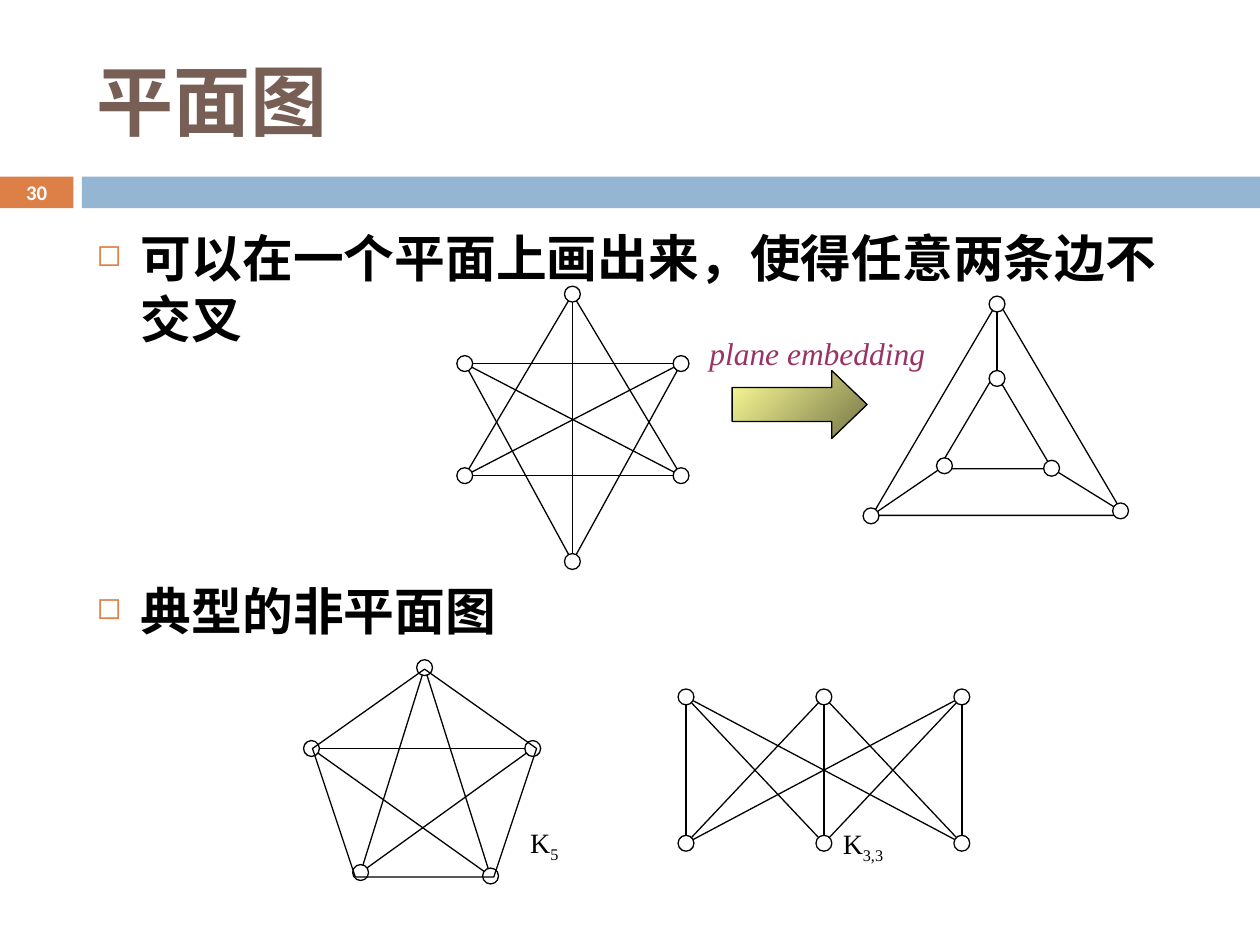
import itertools
import math

import pptx
import pptx.dml.color
import pptx.enum.shapes
import pptx.enum.text
import pptx.oxml.ns
import pptx.util
from lxml import etree

Cm = pptx.util.Cm
Pt = pptx.util.Pt
SHAPE = pptx.enum.shapes.MSO_SHAPE
ALIGN = pptx.enum.text.PP_ALIGN
ANCHOR = pptx.enum.text.MSO_ANCHOR
COLORS = {name: pptx.dml.color.RGBColor.from_string(value) for name, value in {
    "orange": "DD8047", "blue": "94B6D2", "brown": "775F55", "plum": "993366",
    "black": "000000", "white": "FFFFFF", "yellow": "FFFF99", "olive": "767647",
}.items()}

presentation = pptx.Presentation()
presentation.slide_width, presentation.slide_height = Cm(25.4), Cm(19.05)
slide = presentation.slides.add_slide(presentation.slide_layouts[6])


def add_shape(kind, left, top, width, height, fill=None, line="black"):
    shape = slide.shapes.add_shape(kind, Cm(left), Cm(top), Cm(width), Cm(height))
    shape.shadow.inherit = False
    if fill:
        shape.fill.solid()
        shape.fill.fore_color.rgb = COLORS[fill]
    else:
        shape.fill.background()
    if line:
        shape.line.color.rgb = COLORS[line]
        shape.line.width = Pt(0.75)
    else:
        shape.line.fill.background()
    return shape


def add_text(left, top, width, height, text, size, color, font="Calibri"):
    box = slide.shapes.add_textbox(Cm(left), Cm(top), Cm(width), Cm(height))
    box.text_frame.word_wrap = True
    paragraph = box.text_frame.paragraphs[0]
    paragraph.text = text
    paragraph.font.name = font
    paragraph.font.size = Pt(size)
    paragraph.font.color.rgb = COLORS[color]
    return box


# Header bars and slide number
number_bar = add_shape(SHAPE.RECTANGLE, 0, 3.56, 1.48, 0.64, "orange", None)
add_shape(SHAPE.RECTANGLE, 1.65, 3.56, 23.75, 0.64, "blue", None)
frame = number_bar.text_frame
frame.margin_left = frame.margin_right = frame.margin_top = frame.margin_bottom = 0
frame.vertical_anchor = ANCHOR.MIDDLE
paragraph = frame.paragraphs[0]
paragraph.text = "30"
paragraph.alignment = ALIGN.CENTER
paragraph.font.name = "Calibri"
paragraph.font.size = Pt(11.9)
paragraph.font.bold = True
paragraph.font.color.rgb = COLORS["white"]

# Title
title = add_text(1.7, 0.64, 22.66, 2.74, "平面图", 44, "brown")
title.text_frame.vertical_anchor = ANCHOR.MIDDLE
title.text_frame.paragraphs[0].font.bold = True

# Bulleted text; the second item leaves room for the upper graphs
body = slide.shapes.add_textbox(Cm(1.7), Cm(4.45), Cm(22.66), Cm(12.5))
body.text_frame.word_wrap = True
bullets = [("可以在一个平面上画出来，使得任意两条边不交叉", 7), ("典型的非平面图", 132)]
for index, (text, space) in enumerate(bullets):
    paragraph = body.text_frame.add_paragraph() if index else body.text_frame.paragraphs[0]
    paragraph.text = text
    paragraph.space_before = Pt(space)
    properties = paragraph._p.get_or_add_pPr()
    properties.set("marL", str(Cm(0.89)))
    properties.set("indent", str(Cm(-0.89)))
    bullet_color = etree.SubElement(properties, pptx.oxml.ns.qn("a:buClr"))
    etree.SubElement(bullet_color, pptx.oxml.ns.qn("a:srgbClr"), val=str(COLORS["orange"]))
    etree.SubElement(properties, pptx.oxml.ns.qn("a:buSzPct"), val="60000")
    etree.SubElement(properties, pptx.oxml.ns.qn("a:buChar"), char="◻")
    paragraph.font.name = "Calibri"
    paragraph.font.size = Pt(29)
    paragraph.font.bold = True
    paragraph.font.color.rgb = COLORS["black"]

# Polygons that form the outer edges of the planar graph and of K5
add_shape(SHAPE.ISOSCELES_TRIANGLE, 17.58, 6.07, 5.08, 4.32, "white")
add_shape(SHAPE.ISOSCELES_TRIANGLE, 18.92, 7.52, 2.29, 1.93, "white")
add_shape(SHAPE.REGULAR_PENTAGON, 6.3, 13.49, 4.52, 4.19)

# Graphs: node centres, edges as node pairs, node fill
star = [(11.54, 5.93), (13.73, 7.33), (13.73, 9.59),
        (11.54, 11.32), (9.37, 9.59), (9.37, 7.33)]
star_edges = [(0, 4), (4, 2), (0, 2), (5, 3), (1, 3), (5, 1), (4, 1), (5, 2), (0, 3)]
planar = [(20.1, 6.13), (17.56, 10.4), (22.59, 10.3),
          (20.1, 7.63), (19.04, 9.39), (21.2, 9.44)]
planar_edges = [(node, node + 3) for node in range(3)]
k5 = [(8.56, 13.46), (10.74, 15.09), (9.89, 17.66), (7.27, 17.59), (6.28, 15.09)]
k5_edges = [(node, (node + 2) % 5) for node in range(5)]
k33 = [(13.83 + 2.78 * column, y) for y in (14.05, 17) for column in range(3)]
k33_edges = list(itertools.product(range(3), range(3, 6)))

radius = 0.16
for nodes, edges, fill in [(star, star_edges, "white"), (planar, planar_edges, "white"),
                           (k5, k5_edges, None), (k33, k33_edges, "white")]:
    for x, y in nodes:
        add_shape(SHAPE.OVAL, x - radius, y - radius, 2 * radius, 2 * radius, fill)
    for start, end in edges:
        (x1, y1), (x2, y2) = nodes[start], nodes[end]
        length = math.dist(nodes[start], nodes[end])
        dx, dy = radius * (x2 - x1) / length, radius * (y2 - y1) / length
        edge = slide.shapes.add_connector(
            pptx.enum.shapes.MSO_CONNECTOR.STRAIGHT,
            Cm(x1 + dx), Cm(y1 + dy), Cm(x2 - dx), Cm(y2 - dy))
        edge.line.color.rgb = COLORS["black"]
        edge.line.width = Pt(0.75)
        etree.SubElement(edge._element.spPr, pptx.oxml.ns.qn("a:effectLst"))

# Embedding arrow and its label
arrow = add_shape(SHAPE.RIGHT_ARROW, 14.76, 7.47, 2.72, 1.37)
arrow.adjustments[1] = 0.52
arrow.fill.gradient()
arrow.fill.gradient_angle = 315
for stop, color in zip(arrow.fill.gradient_stops, ("yellow", "olive")):
    stop.color.rgb = COLORS[color]
label = add_text(14.05, 6.6, 5.23, 1.45, "plane embedding", 18, "plum", "Times New Roman")
label.text_frame.paragraphs[0].font.italic = True

# Graph names with subscripts
for left, top, subscript in [(10.44, 16.51, "5"), (16.74, 16.54, "3,3")]:
    name = add_text(left, top, 2.46, 1.9, "K", 16, "black", "Times New Roman")
    run = name.text_frame.paragraphs[0].add_run()
    run.text = subscript
    run._r.get_or_add_rPr().set("baseline", "-25000")

presentation.save("out.pptx")
